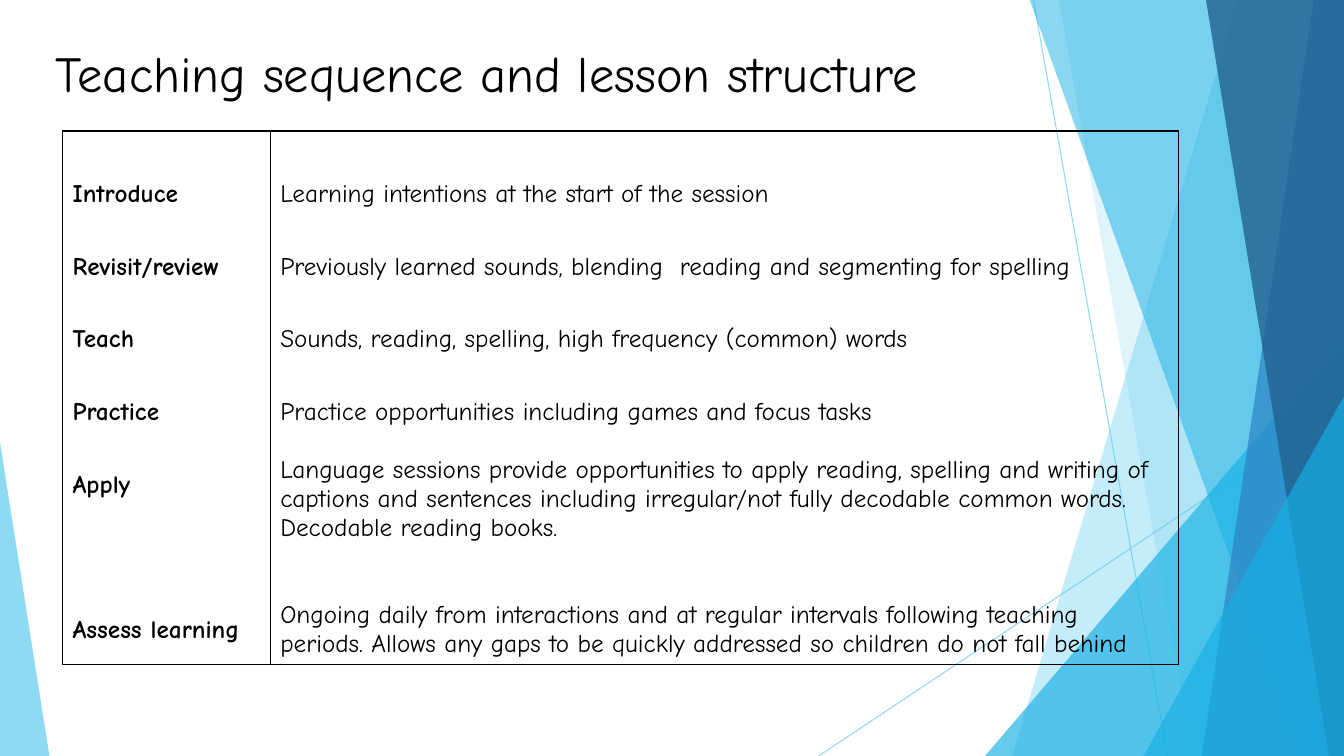
from lxml import etree
from pptx import Presentation
from pptx.dml.color import RGBColor
from pptx.enum import shapes, text
from pptx.oxml import parse_xml
from pptx.oxml.ns import nsdecls, qn
from pptx.util import Inches, Pt

BLACK, SKY, AZURE, BLUE, NAVY = "000000", "5FCBEF", "17B0E4", "2E83C3", "226292"
TOP, BOTTOM, RIGHT = -0.01, 7.5, 13.33


def paint(piece, fill, color, opacity):
    fill.solid()
    fill.fore_color.rgb = RGBColor.from_string(color)
    for tint in piece._element.spPr.iter(qn("a:srgbClr")):
        etree.SubElement(tint, qn("a:alpha"), val=str(opacity * 1000))


def write(paragraph, words, **font):
    run = paragraph.add_run()
    run.text = words
    run.font.color.rgb = RGBColor.from_string(BLACK)
    for key, value in {"name": "Comic Neue", **font}.items():
        setattr(run.font, key, value)


deck = Presentation()
deck.slide_width, deck.slide_height = Inches(RIGHT), Inches(BOTTOM)
slide = deck.slides.add_slide(deck.slide_layouts[5])

# Thin crossing lines
for ends in [(10.25, 0, 11.58, BOTTOM), (RIGHT, 4.03, 8.12, BOTTOM)]:
    ray = slide.shapes.add_connector(shapes.MSO_CONNECTOR.STRAIGHT, *map(Inches, ends))
    ray.line.width = Pt(0.75)
    paint(ray, ray.line.fill, SKY, 70)
    etree.SubElement(ray._element.spPr, qn("a:effectLst"))

# Facets: a band has (top x, bottom x) and runs to the right edge,
# a triangle has (left, top, width, apex position)
facets = [
    ((12.28, 10.04), SKY, 36),
    ((10.5, 11.83), SKY, 20),
    ((9.77, 3.33, 3.56, 1), AZURE, 66),
    ((10.21, 12.91), AZURE, 50),
    ((13.03, 11.92), BLUE, 70),
    ((11.96, 13.18), NAVY, 80),
    ((11.34, 3.93, 1.99, 1), AZURE, 66),
    ((0, 4.39, 0.49, 0), SKY, 70),
]
for geometry, color, opacity in facets:
    if len(geometry) == 2:
        top_x, bottom_x = geometry
        outline = slide.shapes.build_freeform(Inches(top_x), Inches(TOP))
        corners = [(RIGHT, TOP), (RIGHT, BOTTOM), (bottom_x, BOTTOM)]
        outline.add_line_segments([(Inches(x), Inches(y)) for x, y in corners])
        facet = outline.convert_to_shape()
    else:
        left, top, width, apex = geometry
        facet = slide.shapes.add_shape(
            shapes.MSO_SHAPE.ISOSCELES_TRIANGLE,
            *map(Inches, (left, top, width, BOTTOM - top)))
        facet.adjustments[0] = apex
    facet.shadow.inherit = False
    facet.line.fill.background()
    paint(facet, facet.fill, color, opacity)

# Lesson table
stages = [("Introduce", 0), ("Revisit/review", 0), ("Teach", 0), ("Practice", 0),
          ("Apply", 0), ("Assess learning", 51.75)]
# Each entry: words, space before in points, line spacing
details = [
    ("Learning intentions at the start of the session", 0, 2.5),
    ("Previously learned sounds, blending  reading and segmenting for spelling", 0, 2.5),
    ("Sounds, reading, spelling, high frequency (common) words", 0, 2.5),
    ("Practice opportunities including games and focus tasks", 0, 2.5),
    ("Language sessions provide opportunities to apply reading, spelling and writing of "
     "captions and sentences including irregular/not fully decodable common words. "
     "Decodable reading books.", 20.7, 1),
    ("Ongoing daily from interactions and at regular intervals following teaching periods. "
     "Allows any gaps to be quickly addressed so children do not fall behind", 41.4, 1),
]
frame = slide.shapes.add_table(2, 2, *map(Inches, (0.62, 0.17, 11.07, 6.42)))
lesson = frame.table
lesson.first_row = lesson.horz_banding = False
lesson._tbl.tblPr.find(qn("a:tableStyleId")).text = "{2D5ABB26-0587-4C30-8999-92F81FD0307C}"
for column, width in zip(lesson.columns, (2.06, 9.01)):
    column.width = Inches(width)
for row, height in zip(lesson.rows, (1.13, 5.29)):
    row.height = Inches(height)

for row, sides in enumerate(("B", "LRTB")):
    for cell in lesson.rows[row].cells:
        cell.fill.background()
        for place, side in enumerate(sides):
            border = parse_xml(
                f'<a:ln{side} {nsdecls("a")} w="12700"><a:solidFill>'
                f'<a:srgbClr val="{BLACK}"/></a:solidFill></a:ln{side}>')
            cell._tc.get_or_add_tcPr().insert(place, border)
lesson.cell(0, 0).merge(lesson.cell(0, 1))

entries = [[(words, gap, 2.5) for words, gap in stages], details]
for column, items in enumerate(entries):
    body = lesson.cell(1, column).text_frame
    for number, (words, gap, spacing) in enumerate(items):
        paragraph = body.add_paragraph() if number else body.paragraphs[0]
        paragraph.space_before, paragraph.line_spacing = Pt(gap), spacing
        write(paragraph, words, size=Pt(18), bold=column == 0)

# Title
title = slide.shapes.title
for key, value in dict(left=0.45, top=0.37, width=11.06, height=1.01).items():
    setattr(title, key, Inches(value))
heading = title.text_frame
heading.word_wrap = True
heading.vertical_anchor = text.MSO_ANCHOR.TOP
heading.paragraphs[0].alignment = text.PP_ALIGN.LEFT
write(heading.paragraphs[0], "Teaching sequence and lesson structure", size=Pt(36))

deck.save("out.pptx")
